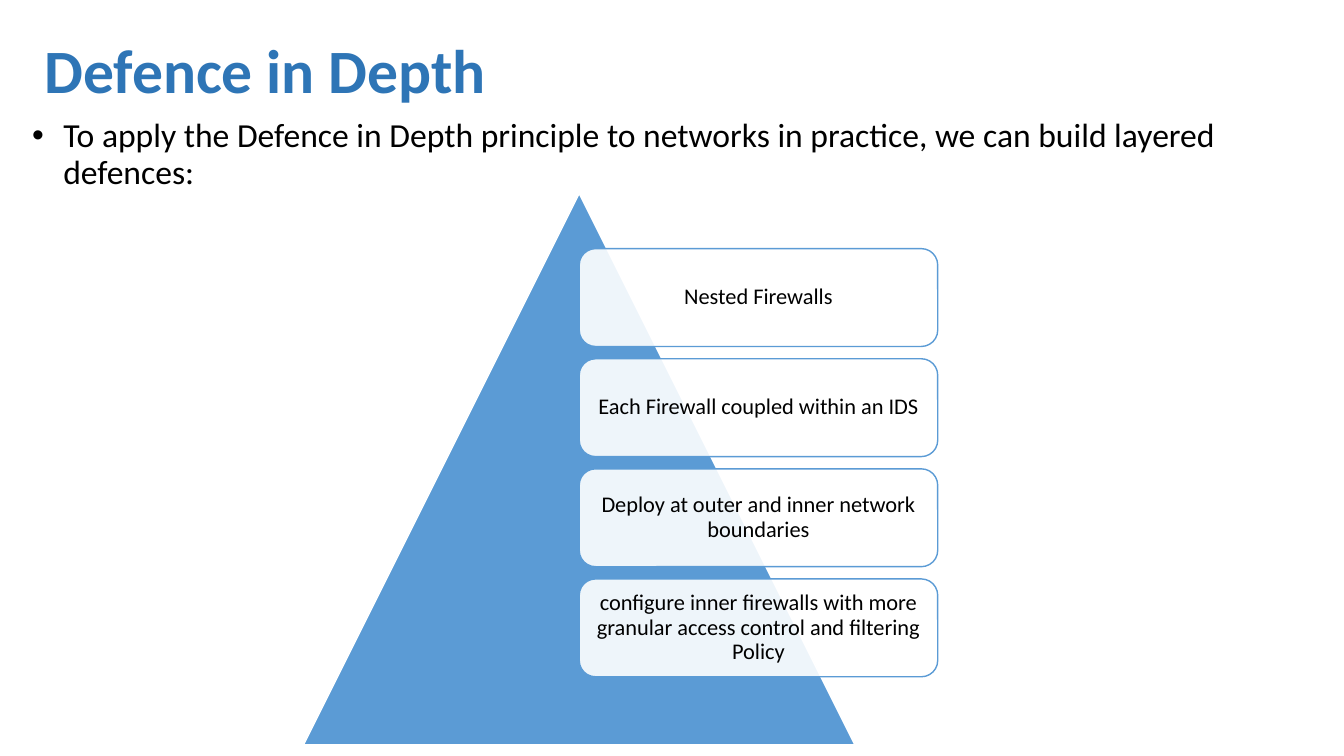
from pptx import Presentation
from pptx.dml.color import RGBColor
from pptx.enum.shapes import MSO_SHAPE
from pptx.enum.text import MSO_ANCHOR, PP_ALIGN
from pptx.oxml.ns import qn
from pptx.util import Inches, Pt
from lxml import etree

BLUE = "5B9BD5"
WHITE = "FFFFFF"
BLACK = "000000"
LAYERS = [
    "Nested Firewalls",
    "Each Firewall coupled within an IDS",
    "Deploy at outer and inner network boundaries",
    "configure inner firewalls with more granular access control and filtering Policy",
]


def rgb(value):
    return RGBColor.from_string(value)


def set_all(target, **values):
    for name, value in values.items():
        setattr(target, name, value)


def place(sp, x, y, w, h):
    set_all(sp, left=Inches(x), top=Inches(y), width=Inches(w), height=Inches(h))


def write(p, text, size, color, bold=False):
    p.line_spacing = 0.9
    r = p.add_run()
    r.text = text
    set_all(r.font, name="Calibri", size=Pt(size), bold=bold)
    r.font.color.rgb = rgb(color)


def add_title(s, x, y, w, h):
    sp = s.shapes.title
    place(sp, x, y, w, h)
    tf = sp.text_frame
    set_all(tf, word_wrap=True, vertical_anchor=MSO_ANCHOR.MIDDLE)
    p = tf.paragraphs[0]
    p.alignment = PP_ALIGN.LEFT
    write(p, "Defence in Depth", 44, "2E75B6", True)


def add_intro(s, x, y, w, h):
    sp = s.shapes.add_textbox(Inches(x), Inches(y), Inches(w), Inches(h))
    tf = sp.text_frame
    tf.word_wrap = True
    p = tf.paragraphs[0]
    pPr = p._p.get_or_add_pPr()
    pPr.set("marL", str(Inches(0.31)))
    pPr.set("indent", str(-Inches(0.31)))
    etree.SubElement(pPr, qn("a:buFont"), typeface="Arial")
    etree.SubElement(pPr, qn("a:buChar"), char="•")
    write(p, "To apply the Defence in Depth principle to networks in practice, "
             "we can build layered defences:", 24, BLACK)


def add_block(s, kind, box, fill, line):
    sp = s.shapes.add_shape(kind, *map(Inches, box))
    sp.shadow.inherit = False
    sp.fill.solid()
    sp.fill.fore_color.rgb = rgb(fill)
    sp.line.color.rgb = rgb(line)
    sp.line.width = Pt(1)
    return sp


def add_layer(s, text, box):
    sp = add_block(s, MSO_SHAPE.ROUNDED_RECTANGLE, box, WHITE, BLUE)
    color = sp.fill._xPr.find(qn("a:solidFill"))[0]
    etree.SubElement(color, qn("a:alpha"), val="90000")
    tf = sp.text_frame
    inset = Inches(0.07)
    set_all(tf, word_wrap=True, vertical_anchor=MSO_ANCHOR.MIDDLE, margin_left=inset,
            margin_right=inset, margin_top=inset, margin_bottom=inset)
    p = tf.paragraphs[0]
    p.alignment = PP_ALIGN.CENTER
    write(p, text, 16, BLACK)


def add_pyramid(s, x, y, side):
    add_block(s, MSO_SHAPE.ISOSCELES_TRIANGLE, (x, y, side, side), BLUE, WHITE)
    width, height = side * 0.65, side * 0.71 / 4
    pitch = height * 9 / 8
    for i, text in enumerate(LAYERS):
        add_layer(s, text, (x + side / 2, y + side / 10 + i * pitch, width, height))


def main():
    prs = Presentation()
    set_all(prs, slide_width=Inches(13.33), slide_height=Inches(7.5))
    s = prs.slides.add_slide(prs.slide_layouts[5])
    add_title(s, 0.34, 0, 12.68, 1.45)
    add_intro(s, 0.22, 1.13, 12.8, 6.26)
    add_pyramid(s, 3.01, 1.92, 5.47)
    prs.save("out.pptx")


if __name__ == "__main__":
    main()
